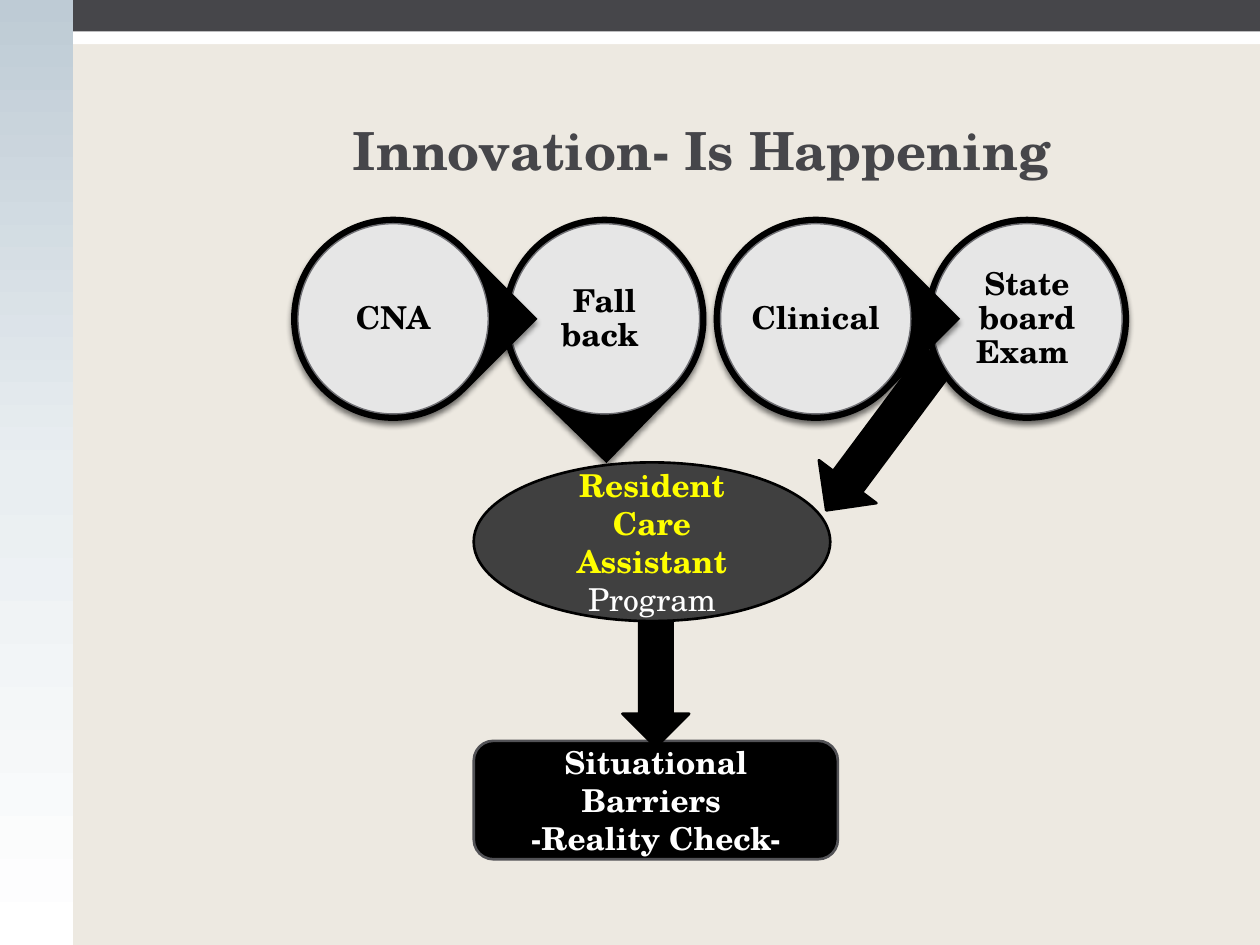
from copy import deepcopy

from lxml import etree
from pptx import Presentation
from pptx.dml.color import RGBColor
from pptx.enum.shapes import MSO_SHAPE
from pptx.enum.text import MSO_ANCHOR, MSO_AUTO_SIZE, PP_ALIGN
from pptx.oxml.ns import qn
from pptx.util import Inches, Pt

RECT, ROUND = MSO_SHAPE.RECTANGLE, MSO_SHAPE.ROUNDED_RECTANGLE
OVAL, TEAR, ARROW = MSO_SHAPE.OVAL, MSO_SHAPE.TEAR, MSO_SHAPE.DOWN_ARROW
CENTER = PP_ALIGN.CENTER
MIDDLE, BOTTOM = MSO_ANCHOR.MIDDLE, MSO_ANCHOR.BOTTOM

BLACK = RGBColor(0, 0, 0)
WHITE = RGBColor(255, 255, 255)
YELLOW = RGBColor(255, 255, 0)
SAND = RGBColor(0xED, 0xE9, 0xE1)
SLATE = RGBColor(0x46, 0x46, 0x4A)
COAL = RGBColor(0x40, 0x40, 0x40)
EDGE = RGBColor(0x52, 0x52, 0x56)
PALE = RGBColor(0xE6, 0xE6, 0xE6)
GRAY = RGBColor(0x6F, 0x6F, 0x74)
SKY = [RGBColor(0xBE, 0xCB, 0xD5), RGBColor(0xE9, 0xEE, 0xF1), WHITE]

FONT = "TeX Gyre Schola"
WIDE, HIGH = 10, 7.5
SIDE = 0.58
# Row of steps: first left edge, top, pitch and outer size
LEFT, TOP, PITCH, DISC = 2.31, 1.72, 1.677, 1.62
STEPS = [("CNA", TEAR, 45), ("Fall back ", TEAR, 134.2),
         ("Clinical", TEAR, 45), ("State board Exam ", OVAL, 0)]


def add_shape(slide, kind, box, fill, line=None, width=1.5, turn=0):
    shape = slide.shapes.add_shape(kind, *map(Inches, box))
    shape.shadow.inherit = False
    shape.rotation = turn
    shape.fill.solid()
    shape.fill.fore_color.rgb = fill
    if line is None:
        shape.line.fill.background()
    else:
        shape.line.color.rgb = line
        shape.line.width = Pt(width)
    return shape


def add_shade(shape):
    """Give the shape a soft shadow straight below it."""
    effects = shape._element.spPr.find(qn("a:effectLst"))
    shade = etree.SubElement(effects, qn("a:outerShdw"), blurRad=str(Pt(3)),
                             dist=str(Pt(2.4)), dir="5400000", rotWithShape="0")
    color = etree.SubElement(shade, qn("a:srgbClr"), val=str(BLACK))
    etree.SubElement(color, qn("a:alpha"), val="45000")


def set_font(font, color, size=18, bold=True):
    font.name, font.size, font.bold = FONT, Pt(size), bold
    font.color.rgb = color


def write(frame, lines, color, size=18, anchor=MIDDLE):
    frame.word_wrap = True
    frame.auto_size = MSO_AUTO_SIZE.NONE
    frame.vertical_anchor = anchor
    frame.text = "\n".join(lines)
    for para in frame.paragraphs:
        para.alignment = CENTER
        set_font(para.font, color, size)


def add_frame(slide):
    """Draw the sand ground, the top bars and the shaded side band."""
    ground = slide.background.fill
    ground.solid()
    ground.fore_color.rgb = SAND
    add_shape(slide, RECT, (0, 0, WIDE, 0.35), WHITE)
    fill = add_shape(slide, RECT, (0, 0, SIDE, HIGH), WHITE).fill
    fill.gradient()
    fill.gradient_angle = 270
    first = fill.gradient_stops[0]._gs
    first.addnext(deepcopy(first))
    for i, (stop, color) in enumerate(zip(fill.gradient_stops, SKY)):
        stop.position = i / 2
        stop.color.rgb = color
    add_shape(slide, RECT, (SIDE, 0, WIDE - SIDE, 0.25), SLATE)


def add_step(slide, col, text, kind, turn):
    def inset(gap):
        return (LEFT + col * PITCH + gap, TOP + gap, DISC - 2 * gap, DISC - 2 * gap)

    add_shade(add_shape(slide, kind, inset(0), BLACK, turn=turn))
    add_shade(add_shape(slide, OVAL, inset(0.055), PALE, GRAY, 0.79))
    frame = slide.shapes.add_textbox(*map(Inches, inset(0.27))).text_frame
    frame.margin_left = frame.margin_right = Inches(0.03)
    frame.margin_top = frame.margin_bottom = Inches(0.03)
    write(frame, [text], BLACK)
    frame.paragraphs[0].line_spacing = 0.9


def add_arrow(slide, box, turn=0):
    add_shape(slide, ARROW, box, BLACK, BLACK, turn=turn)


def add_title(slide, text):
    title = slide.shapes.title
    title.left, title.top = Inches(1.67), Inches(0.83)
    title.width, title.height = Inches(7.8), Inches(0.66)
    write(title.text_frame, [text], SLATE, 30, BOTTOM)


def main():
    deck = Presentation()
    deck.slide_width, deck.slide_height = Inches(WIDE), Inches(HIGH)
    slide = deck.slides.add_slide(deck.slide_layouts[5])
    add_frame(slide)
    add_title(slide, "Innovation- Is Happening")

    add_arrow(slide, (6.72, 2.7, 0.57, 1.5), 36.7)
    for col, step in reversed(list(enumerate(STEPS))):
        add_step(slide, col, *step)

    program = add_shape(slide, OVAL, (3.76, 3.67, 2.83, 1.26), COAL, BLACK)
    write(program.text_frame, ["Resident Care Assistant "], YELLOW)
    run = program.text_frame.paragraphs[0].add_run()
    run.text = "Program"
    set_font(run.font, WHITE, bold=False)

    check = add_shape(slide, ROUND, (3.76, 5.88, 2.89, 0.94), BLACK, EDGE)
    write(check.text_frame, ["Situational Barriers ", "-Reality Check-"], WHITE)
    add_arrow(slide, (4.94, 4.93, 0.53, 1))
    deck.save("out.pptx")


if __name__ == "__main__":
    main()
